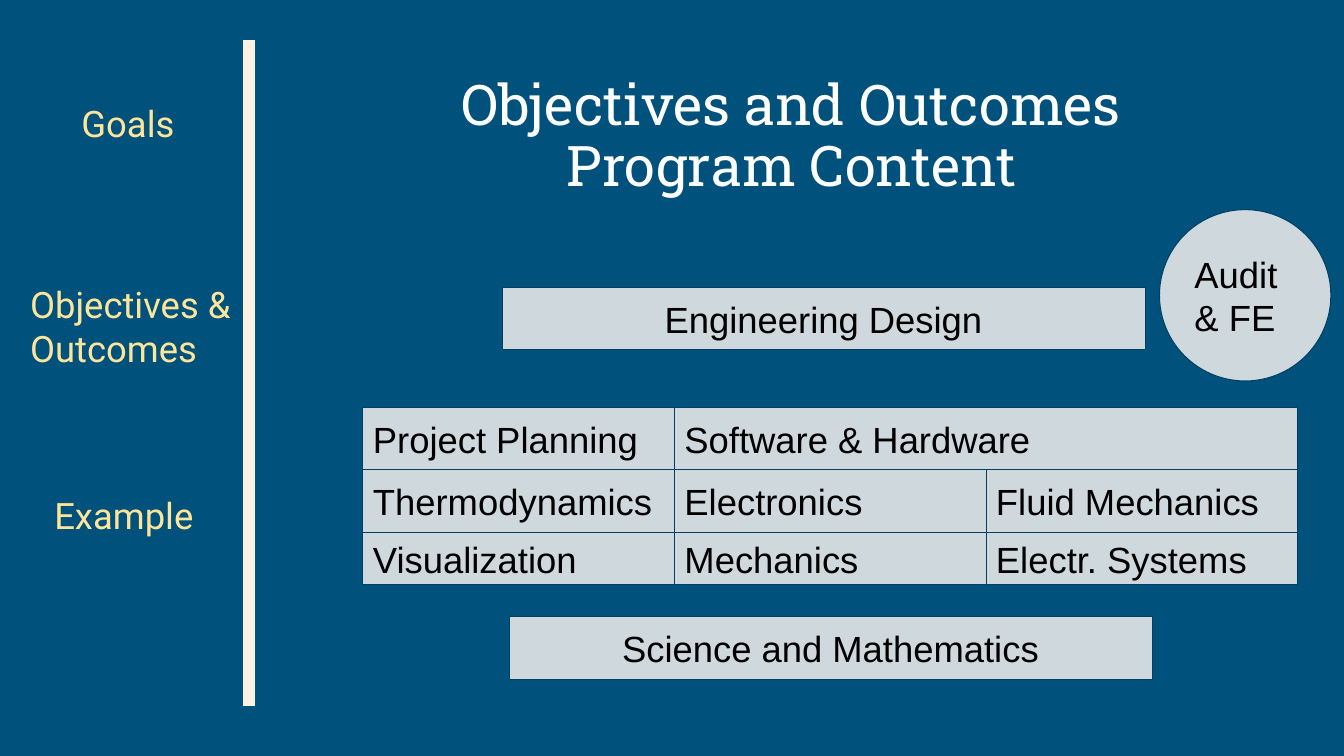
from lxml import etree
from pptx import Presentation
from pptx.dml.color import RGBColor
from pptx.enum.shapes import MSO_CONNECTOR, MSO_SHAPE
from pptx.enum.text import MSO_ANCHOR, PP_ALIGN
from pptx.oxml.ns import qn
from pptx.util import Inches, Pt

RECT, OVAL = MSO_SHAPE.RECTANGLE, MSO_SHAPE.OVAL
LEFT, CENTER = PP_ALIGN.LEFT, PP_ALIGN.CENTER
TOP, MIDDLE = MSO_ANCHOR.TOP, MSO_ANCHOR.MIDDLE
STRAIGHT = MSO_CONNECTOR.STRAIGHT

NAVY, EDGE, PANEL = "00517C", "004065", "CFD8DC"
WHITE, BLACK, YELLOW, CREAM = "FFFFFF", "000000", "FFE599", "FFF1E2"

# Course grid: equal columns, rows stacked without gaps
GRID_LEFT, GRID_TOP, COLUMN, ROW = 3.6, 4.04, 3.09, 0.62
ROW_HEIGHTS = [ROW, ROW, 0.52]
COURSES = [  # each course with the number of columns it spans
    [("Project Planning", 1), ("Software & Hardware", 2)],
    [("Thermodynamics", 1), ("Electronics", 1), ("Fluid Mechanics", 1)],
    [("Visualization", 1), ("Mechanics", 1), ("Electr. Systems", 1)],
]
BAR_WIDTH = 6.38
BARS = [("Engineering Design", 4.98, 2.85), ("Science and Mathematics", 5.05, 6.12)]
STAGES = [
    ("Goals", 0.71, 0.9, 1.26, 0.64),
    ("Objectives & Outcomes", 0.2, 2.7, 2.27, 1.08),
    ("Example", 0.44, 4.79, 1.79, 0.64),
]


def color(value):
    return RGBColor.from_string(value)


def write(box, text, font, ink, size=26, align=LEFT, anchor=MIDDLE, spacing=None, pad=0.1):
    frame = box.text_frame
    frame.word_wrap = True
    frame.vertical_anchor = anchor
    frame.margin_left = frame.margin_right = Inches(0.1)
    frame.margin_top = frame.margin_bottom = Inches(pad)
    frame.text = text
    for para in frame.paragraphs:
        para.alignment = align
        if spacing:
            para.line_spacing = spacing
        for span in para.runs:
            span.font.name = font
            span.font.size = Pt(size)
            span.font.color.rgb = color(ink)


def add_panel(page, kind, text, left, top, width, height, align=LEFT):
    box = page.shapes.add_shape(kind, *map(Inches, (left, top, width, height)))
    box.shadow.inherit = False
    box.fill.solid()
    box.fill.fore_color.rgb = color(PANEL)
    box.line.color.rgb = color(EDGE)
    box.line.width = Pt(0.75)
    write(box, text, "Arial", BLACK, align=align)


def add_label(page, text, left, top, width, height, font, ink, **style):
    box = page.shapes.add_textbox(*map(Inches, (left, top, width, height)))
    write(box, text, font, ink, **style)


def add_divider(page, x, top, bottom):
    rule = page.shapes.add_connector(STRAIGHT, *map(Inches, (x, top, x, bottom)))
    rule.line.color.rgb = color(CREAM)
    rule.line.width = Pt(9)
    etree.SubElement(rule.element.spPr, qn("a:effectLst"))


def add_course_grid(page):
    top = GRID_TOP
    for courses, height in zip(COURSES, ROW_HEIGHTS):
        left = GRID_LEFT
        for name, columns in courses:
            add_panel(page, RECT, name, left, top, columns * COLUMN, height)
            left += columns * COLUMN
        top += height


def main():
    deck = Presentation()
    deck.slide_width, deck.slide_height = Inches(13.33), Inches(7.5)
    page = deck.slides.add_slide(deck.slide_layouts[6])
    page.background.fill.solid()
    page.background.fill.fore_color.rgb = color(NAVY)

    # Title
    add_label(page, "Objectives and Outcomes\nProgram Content", 3.06, 0.54, 9.58, 1.65,
              "Roboto Slab", WHITE, size=40, align=CENTER, spacing=0.9, pad=0.05)

    # Program content
    add_course_grid(page)
    for text, left, top in BARS:
        add_panel(page, RECT, text, left, top, BAR_WIDTH, ROW, CENTER)
    add_panel(page, OVAL, "Audit & FE", 11.5, 2.08, 1.7, 1.7)

    # Side column
    for stage in STAGES:
        add_label(page, *stage, "Roboto", YELLOW, anchor=TOP)
    add_divider(page, 2.47, 0.4, 7)

    deck.save("out.pptx")


if __name__ == "__main__":
    main()
